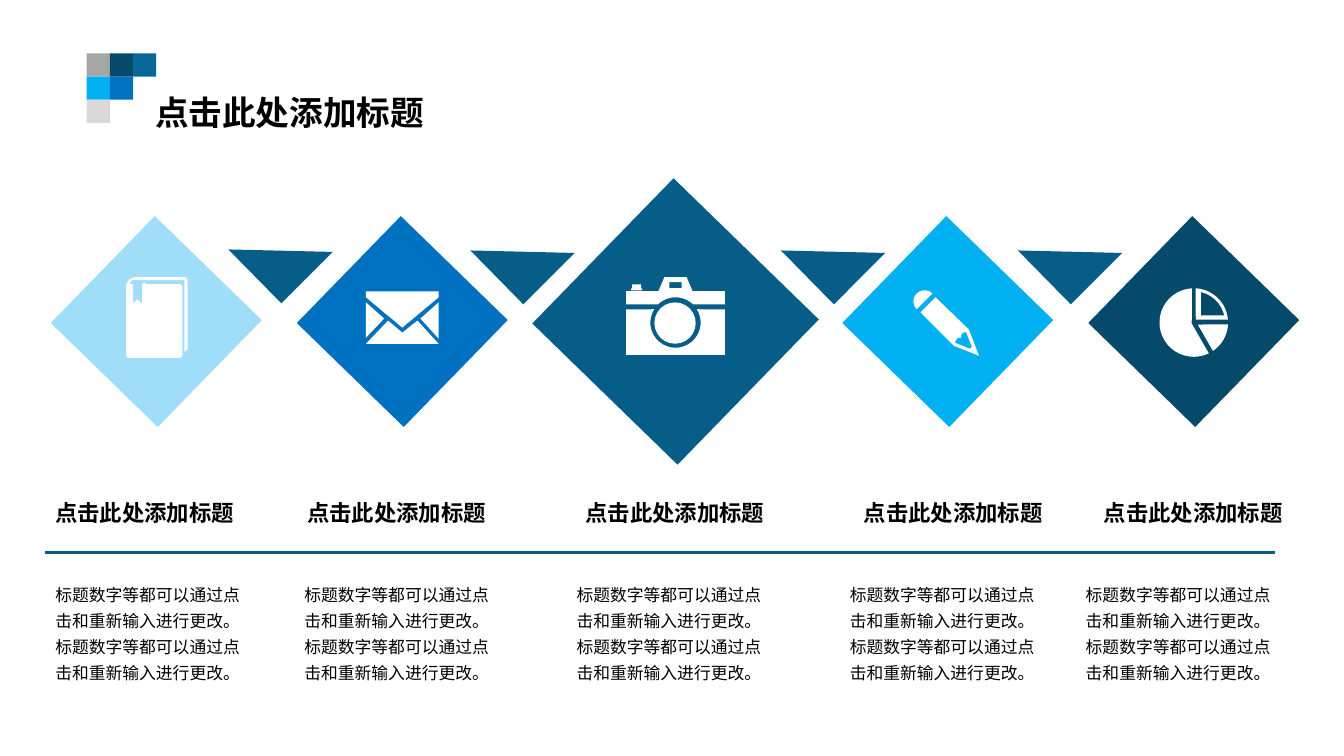
from dataclasses import dataclass
from math import cos, radians, sin

from lxml.etree import SubElement
from pptx import Presentation as Deck
from pptx.dml.color import RGBColor as Rgb
from pptx.enum.shapes import MSO_CONNECTOR as Link, MSO_SHAPE as Kind
from pptx.enum.text import MSO_AUTO_SIZE as Fit
from pptx.oxml.ns import qn
from pptx.util import Inches, Pt


@dataclass(frozen=True)
class Theme:
    font: str = "Noto Sans CJK SC"
    ink: str = "000000"
    white: str = "FFFFFF"
    teal: str = "065D88"
    navy: str = "05496B"
    blue: str = "0070C0"
    sky: str = "00B0F0"
    pale: str = "9FDDF8"
    steel: str = "076797"
    grey: str = "A6A6A6"
    light: str = "D9D9D9"
    title: int = 24
    head: int = 16
    body: int = 12


T = Theme()
TITLE = "点击此处添加标题"
BODY = "标题数字等都可以通过点击和重新输入进行更改。" * 2


def paint(shape, color):
    shape.shadow.inherit = False
    shape.fill.solid()
    shape.fill.fore_color.rgb = Rgb.from_string(color)
    shape.line.fill.background()


def block(slide, kind, x, y, w, h, color, turn=0):
    shape = slide.shapes.add_shape(kind, Inches(x), Inches(y), Inches(w), Inches(h))
    shape.rotation = turn
    paint(shape, color)
    return shape


def label(slide, x, y, w, h, text, size, bold=False, space=1.0):
    box = slide.shapes.add_textbox(Inches(x), Inches(y), Inches(w), Inches(h))
    frame = box.text_frame
    frame.word_wrap = True
    frame.auto_size = Fit.SHAPE_TO_FIT_TEXT
    frame.text = text
    para = frame.paragraphs[0]
    para.line_spacing = space
    run = para.runs[0]
    run.font.size = Pt(size)
    run.font.bold = bold
    run.font.name = T.font
    run.font.color.rgb = Rgb.from_string(T.ink)
    SubElement(run.font._element, qn("a:ea")).set("typeface", T.font)


def arc(x, y, r, start, end, steps=24):
    turns = [radians(start + (end - start) * i / steps) for i in range(steps + 1)]
    return [(x + r * cos(a), y + r * sin(a)) for a in turns]


def icon(slide, *rings):
    pen = None
    for ring in rings:
        dots = [(Inches(x), Inches(y)) for x, y in ring]
        if pen is None:
            pen = slide.shapes.build_freeform(*dots[0], scale=1.0)
        else:
            pen.move_to(*dots[0])
        pen.add_line_segments(dots[1:], close=True)
    paint(pen.convert_to_shape(), T.white)


def book(slide):
    icon(slide, [
        *arc(1.35, 2.85, 0.1, 270, 180, 8), *arc(1.28, 3.52, 0.03, 180, 90, 4),
        *arc(1.78, 3.52, 0.03, 90, 0, 4), *arc(1.78, 2.85, 0.03, 0, -90, 4),
        (1.45, 2.82), (1.43, 2.8), (1.41, 2.82), (1.41, 3.01), (1.36, 2.97),
        (1.32, 3.01), (1.32, 2.82), (1.28, 2.82), (1.31, 2.78), (1.83, 2.78),
        (1.83, 3.49), (1.86, 3.47), *arc(1.83, 2.78, 0.03, 0, -90, 4)])


def mail(slide):
    icon(slide,
         [(3.63, 2.95), (3.99, 3.25), (4.35, 2.95), (4.35, 2.89), (3.63, 2.89)],
         [(3.63, 3.35), (3.81, 3.16), (3.63, 3)],
         [(4.35, 3.36), (4.17, 3.16), (4.35, 3)],
         [(3.99, 3.3), (3.85, 3.18), (3.63, 3.41), (4.35, 3.41), (4.14, 3.18)])


def camera(slide):
    block(slide, Kind.OVAL, 6.49, 3, 0.41, 0.41, T.white)
    icon(slide, [*arc(6.7, 3.2, 0.25, 212, -32),
                 (7.19, 3.07), (7.19, 3.52), (6.21, 3.52), (6.21, 3.07)])
    icon(slide,
         [(7.19, 2.89), (6.87, 2.89), (6.81, 2.75), (6.59, 2.75), (6.53, 2.89),
          (6.21, 2.89), (6.21, 3.02), *arc(6.7, 3.2, 0.25, 226, 314), (7.19, 3.02)],
         [(6.76, 2.86), (6.64, 2.86), (6.64, 2.8), (6.76, 2.8)])
    block(slide, Kind.RECTANGLE, 6.26, 2.86, 0.11, 0.02, T.white)
    block(slide, Kind.RECTANGLE, 6.27, 2.82, 0.09, 0.05, T.white)


def pencil(slide):
    icon(slide, arc(9.17, 2.99, 0.11, 135, 315))
    icon(slide,
         [(9.46, 3.43), (9.71, 3.53), (9.61, 3.27), (9.28, 2.95), (9.13, 3.1)],
         [(9.49, 3.36), (9.51, 3.35), (9.54, 3.35), (9.53, 3.34), (9.54, 3.31),
          (9.58, 3.29), (9.64, 3.44), (9.62, 3.46), (9.47, 3.4)])


def pie(slide):
    x, y, r = 11.84, 3.2, 0.34
    icon(slide,
         [(11.82, 3.21), *arc(x, y, r, 64, 267)],
         [(11.86, 3.17), *arc(x, y, r, 273, 355)],
         [(11.91, 3.13), *arc(x, y, 0.31, 283, 347)],
         [(11.88, 3.22), *arc(x, y, r, 3, 56)])


def header(slide):
    rows = ((T.grey, T.navy, T.steel), (T.sky, T.blue), (T.light,))
    for j, row in enumerate(rows):
        for i, color in enumerate(row):
            block(slide, Kind.RECTANGLE, 0.86 + 0.23 * i, 0.53 + 0.23 * j,
                  0.23, 0.23, color)
    label(slide, 1.44, 0.86, 3.12, 0.5, TITLE, T.title, True)


def rule(slide):
    line = slide.shapes.add_connector(
        Link.STRAIGHT, Inches(0.45), Inches(5.48), Inches(12.65), Inches(5.48))
    line.line.color.rgb = Rgb.from_string(T.teal)
    line.line.width = Pt(2)
    SubElement(line._element.spPr, qn("a:effectLst"))


def main():
    deck = Deck()
    deck.slide_width, deck.slide_height = Inches(13.33), Inches(7.5)
    slide = deck.slides.add_slide(deck.slide_layouts[6])
    header(slide)
    items = (
        (1.55, 1.48, T.pale, book, 0.45, 2.34, 0.45),
        (3.99, 1.48, T.blue, mail, 2.95, 2.34, 2.92),
        (6.7, 2.01, T.teal, camera, 5.71, 1.99, 5.62),
        (9.4, 1.48, T.sky, pencil, 8.47, 1.99, 8.33),
        (11.84, 1.48, T.navy, pie, 10.85, 1.99, 10.67),
    )
    for mid, size, color, draw, head, wide, body in items:
        block(slide, Kind.RECTANGLE, mid - size / 2, 3.19 - size / 2,
              size, size, color, 44.2)
        draw(slide)
        label(slide, head, 4.9, wide, 0.37, TITLE, T.head, True)
        label(slide, body, 5.69, 2.16, 1.41, BODY, T.body, space=1.3)
    rule(slide)
    for x, y in ((2.41, 2.13), (4.81, 2.14), (7.89, 2.14), (10.24, 2.14)):
        wedge = block(slide, Kind.ISOSCELES_TRIANGLE, x, y, 0.75, 0.72, T.teal, 45.5)
        wedge.adjustments[0] = 0.99
    deck.save("out.pptx")


if __name__ == "__main__":
    main()
